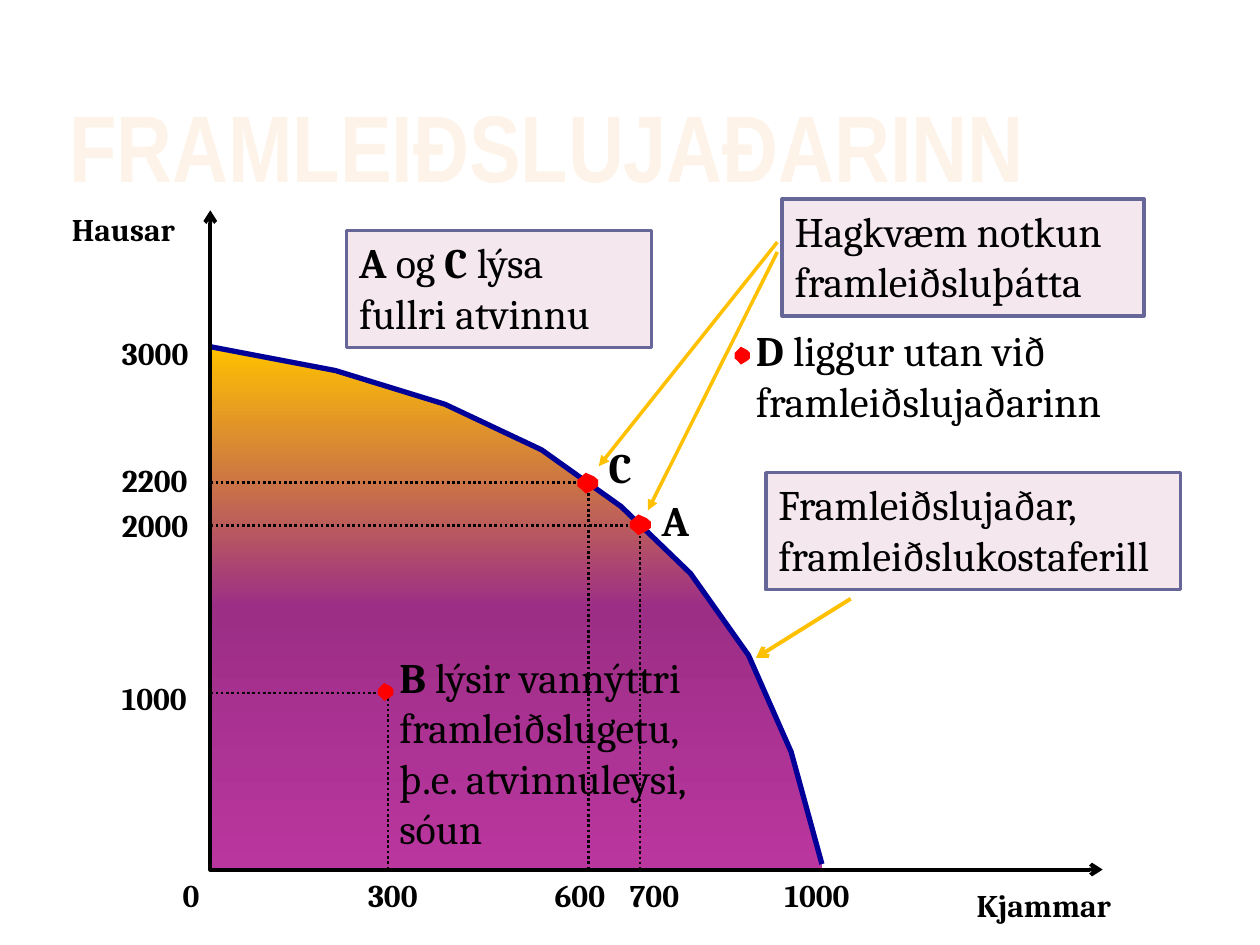
"""Builds a slide that explains the production possibility frontier."""

from dataclasses import dataclass

import lxml.etree
import pptx
import pptx.dml.color
import pptx.enum.dml
import pptx.enum.shapes
import pptx.enum.text
import pptx.oxml
import pptx.oxml.ns
import pptx.util

Cm = pptx.util.Cm
Pt = pptx.util.Pt
RGBColor = pptx.dml.color.RGBColor
qn = pptx.oxml.ns.qn
Point = tuple[float, float]

BLACK = RGBColor(0x00, 0x00, 0x00)
NAVY = RGBColor(0x00, 0x00, 0x99)
RED = RGBColor(0xFF, 0x00, 0x00)
AMBER = RGBColor(0xFF, 0xC0, 0x00)
PURPLE = RGBColor(0x9C, 0x2E, 0x86)
MAGENTA = RGBColor(0xBA, 0x36, 0x9F)
PINK = RGBColor(0xF4, 0xE7, 0xED)
SLATE = RGBColor(0x66, 0x66, 0x99)
CREAM = RGBColor(0xFE, 0xF3, 0xE8)

AXIS_X, AXIS_TOP, AXIS_Y, AXIS_RIGHT = 4.24, 4.24, 17.53, 22.23
DIGIT_WIDTH, LABEL_HEIGHT = 0.38, 0.76
FRONTIER = [
    (AXIS_X, 6.99), (6.76, 7.47), (8.97, 8.15), (10.92, 9.07), (12.52, 10.21),
    (13.92, 11.56), (15.09, 13.21), (15.95, 15.16), (16.57, 17.42),
]
MARKER_OUTLINE = [
    (0.4, 1), (0.8, 0.8), (1, 0.65), (1, 0.35), (0.8, 0.18), (0.4, 0),
    (0.2, 0.18), (0, 0.35), (0, 0.65), (0.2, 0.8),
]


@dataclass
class Run:
    text: str
    bold: bool = False


@dataclass
class Text:
    left: float
    top: float
    width: float
    height: float
    paragraphs: list[list[Run]]
    size: int = 24
    wrap: bool = True


@dataclass
class Marker:
    left: float
    top: float
    width: float
    height: float


@dataclass
class Arrow:
    start: Point
    end: Point
    width: float
    head: str


def label(text: str, left: float, top: float, width: float, size: int = 18) -> Text:
    height = LABEL_HEIGHT * size / 18
    return Text(left, top, width, height, [[Run(text, True)]], size, False)


def tick(text: str, left: float, top: float) -> Text:
    return label(text, left, top, DIGIT_WIDTH * len(text))


LABELS = [
    *(tick(text, 2.46, top) for text, top in
      [("3000", 6.73), ("2200", 9.3), ("2000", 10.21), ("1000", 13.69)]),
    *(tick(text, left, 17.65) for text, left in
      [("0", 3.68), ("300", 7.42), ("600", 11.18), ("700", 12.7), ("1000", 15.82)]),
    label("A", 13.34, 9.96, 0.56, 24),
    label("C", 12.27, 8.89, 0.48, 24),
    label("Hausar", 1.45, 4.24, 2.16),
    Text(19.69, 17.86, 5.08, LABEL_HEIGHT, [[Run("Kjammar", True)]], 18),
]
NOTES = [
    Text(8.05, 13.13, 6.55, 4.11, [
        [Run("B ", True), Run("lýsir vannýttri")],
        [Run("framleiðslugetu,")],
        [Run("þ.e. atvinnuleysi, sóun")],
    ]),
    Text(15.24, 6.55, 8.46, 2.06, [
        [Run("D ", True), Run("liggur utan við framleiðslujaðarinn")],
    ]),
]
CALLOUTS = [
    Text(15.44, 9.53, 8.36, 2.36,
         [[Run("Framleiðslujaðar,")], [Run("framleiðslukostaferill")]]),
    Text(6.99, 4.65, 6.15, 2.36,
         [[Run("A", True), Run(" og "), Run("C", True), Run(" lýsa fullri atvinnu")]]),
    Text(15.77, 4.01, 7.29, 2.36, [[Run("Hagkvæm notkun framleiðsluþátta")]]),
]
GUIDED_POINTS = [(12.9, 10.59), (7.82, 13.97), (11.86, 9.73)]
MARKERS = [
    Marker(7.62, 13.77, 0.31, 0.36),
    Marker(14.81, 6.99, 0.31, 0.36),
    Marker(12.7, 10.37, 0.42, 0.42),
    Marker(11.64, 9.53, 0.42, 0.42),
]
ARROWS = [
    Arrow((17.15, 12.07), (15.24, 13.26), 2.25, "arrow"),
    Arrow((15.67, 5.08), (13.06, 10.29), 2, "triangle"),
    Arrow((15.67, 4.88), (12.07, 9.4), 2, "triangle"),
]


def add_arrowhead(shape, end: str, kind: str) -> None:
    line = shape.line._get_or_add_ln()
    lxml.etree.SubElement(line, qn(f"a:{end}"), type=kind)


def draw_outline(slide, points: list[Point], close: bool):
    (left, top), *rest = [(Cm(x), Cm(y)) for x, y in points]
    builder = slide.shapes.build_freeform(left, top)
    builder.add_line_segments(rest, close=close)
    shape = builder.convert_to_shape()
    shape.shadow.inherit = False
    shape.fill.background()
    shape.line.fill.background()
    return shape


def set_line(shape, color: RGBColor, width: float) -> None:
    shape.line.color.rgb = color
    shape.line.width = Pt(width)


def draw_area(slide) -> None:
    corners = [(FRONTIER[-1][0], AXIS_Y), (AXIS_X, AXIS_Y)]
    area = draw_outline(slide, FRONTIER + corners, True)
    area.fill.gradient()
    area.fill.gradient_angle = 270
    stops = area._element.spPr.find(qn("a:gradFill")).find(qn("a:gsLst"))
    for stop in list(stops):
        stops.remove(stop)
    for position, color in [(0, AMBER), (50, PURPLE), (100, MAGENTA)]:
        stop = lxml.etree.SubElement(stops, qn("a:gs"), pos=str(position * 1000))
        lxml.etree.SubElement(stop, qn("a:srgbClr"), val=str(color))


def draw_line(slide, start: Point, end: Point, color: RGBColor, width: float):
    line = slide.shapes.add_connector(
        pptx.enum.shapes.MSO_CONNECTOR.STRAIGHT, *map(Cm, start + end))
    set_line(line, color, width)
    lxml.etree.SubElement(line._element.spPr, qn("a:effectLst"))
    return line


def draw_guides(slide, point: Point) -> None:
    for start, end in [((AXIS_X, point[1]), point), (point, (point[0], AXIS_Y))]:
        guide = draw_line(slide, start, end, BLACK, 1.5)
        guide.line.dash_style = pptx.enum.dml.MSO_LINE.ROUND_DOT


def draw_marker(slide, marker: Marker) -> None:
    points = [(marker.left + x * marker.width, marker.top + y * marker.height)
              for x, y in MARKER_OUTLINE]
    shape = draw_outline(slide, points, True)
    shape.fill.solid()
    shape.fill.fore_color.rgb = RED


def write_text(frame, text: Text) -> None:
    frame.word_wrap = text.wrap
    frame.auto_size = pptx.enum.text.MSO_AUTO_SIZE.SHAPE_TO_FIT_TEXT
    frame.vertical_anchor = pptx.enum.text.MSO_ANCHOR.TOP
    for index, runs in enumerate(text.paragraphs):
        paragraph = frame.add_paragraph() if index else frame.paragraphs[0]
        paragraph.alignment = pptx.enum.text.PP_ALIGN.LEFT
        paragraph.font.name = "Cambria"
        paragraph.font.size = Pt(text.size)
        paragraph.font.color.rgb = BLACK
        for item in runs:
            run = paragraph.add_run()
            run.text = item.text
            run.font.bold = item.bold


def draw_text(slide, text: Text) -> None:
    box = slide.shapes.add_textbox(*map(Cm, (text.left, text.top, text.width, text.height)))
    frame = box.text_frame
    frame.margin_left = frame.margin_right = frame.margin_top = frame.margin_bottom = 0
    write_text(frame, text)


def draw_callout(slide, text: Text) -> None:
    box = slide.shapes.add_shape(
        pptx.enum.shapes.MSO_SHAPE.RECTANGLE,
        *map(Cm, (text.left, text.top, text.width, text.height)))
    box.shadow.inherit = False
    box.fill.solid()
    box.fill.fore_color.rgb = PINK
    set_line(box, SLATE, 2)
    write_text(box.text_frame, text)


def write_title(slide) -> None:
    title = slide.shapes.title
    title.left, title.top, title.width, title.height = map(Cm, (1.27, 0.89, 20.12, 3.18))
    frame = title.text_frame
    frame.text = "FRAMLEIÐSLUJAÐARINN"
    frame.auto_size = pptx.enum.text.MSO_AUTO_SIZE.NONE
    frame.vertical_anchor = pptx.enum.text.MSO_ANCHOR.BOTTOM
    frame.margin_left = frame.margin_right = Cm(0.13)
    frame.margin_top = frame.margin_bottom = 0
    paragraph = frame.paragraphs[0]
    paragraph.alignment = pptx.enum.text.PP_ALIGN.LEFT
    paragraph.font.name = "Arial Narrow"
    paragraph.font.size = Pt(54)
    paragraph.font.bold = True
    paragraph.font.color.rgb = CREAM


def main() -> None:
    presentation = pptx.Presentation()
    presentation.slide_width, presentation.slide_height = Cm(25.4), Cm(19.05)
    slide = presentation.slides.add_slide(presentation.slide_layouts[5])
    write_title(slide)
    draw_area(slide)
    set_line(draw_outline(slide, FRONTIER, False), NAVY, 3)
    axes = draw_outline(
        slide, [(AXIS_X, AXIS_TOP), (AXIS_X, AXIS_Y), (AXIS_RIGHT, AXIS_Y)], False)
    set_line(axes, BLACK, 2.25)
    for end in ("headEnd", "tailEnd"):
        add_arrowhead(axes, end, "arrow")
    for point in GUIDED_POINTS:
        draw_guides(slide, point)
    for marker in MARKERS:
        draw_marker(slide, marker)
    for text in LABELS + NOTES:
        draw_text(slide, text)
    for text in CALLOUTS:
        draw_callout(slide, text)
    for arrow in ARROWS:
        line = draw_line(slide, arrow.start, arrow.end, AMBER, arrow.width)
        add_arrowhead(line, "tailEnd", arrow.head)
    presentation.save("out.pptx")


if __name__ == "__main__":
    main()
